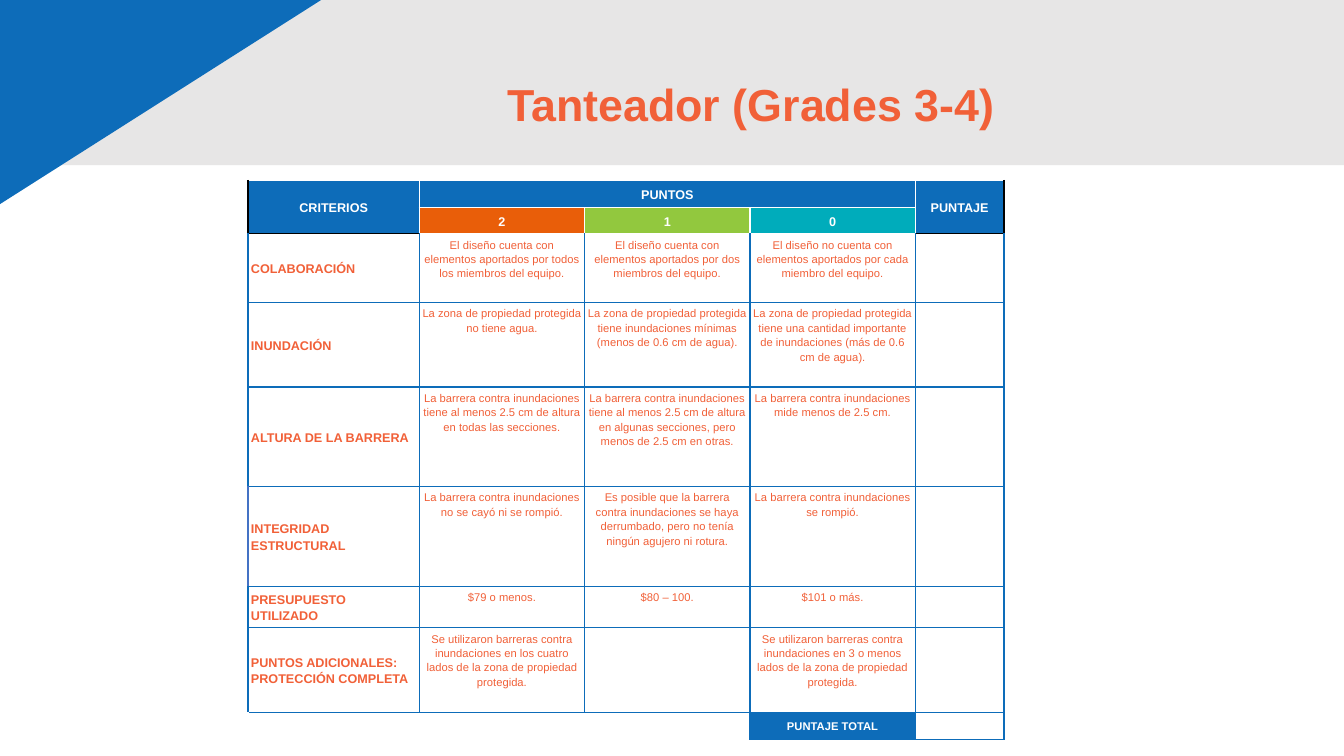
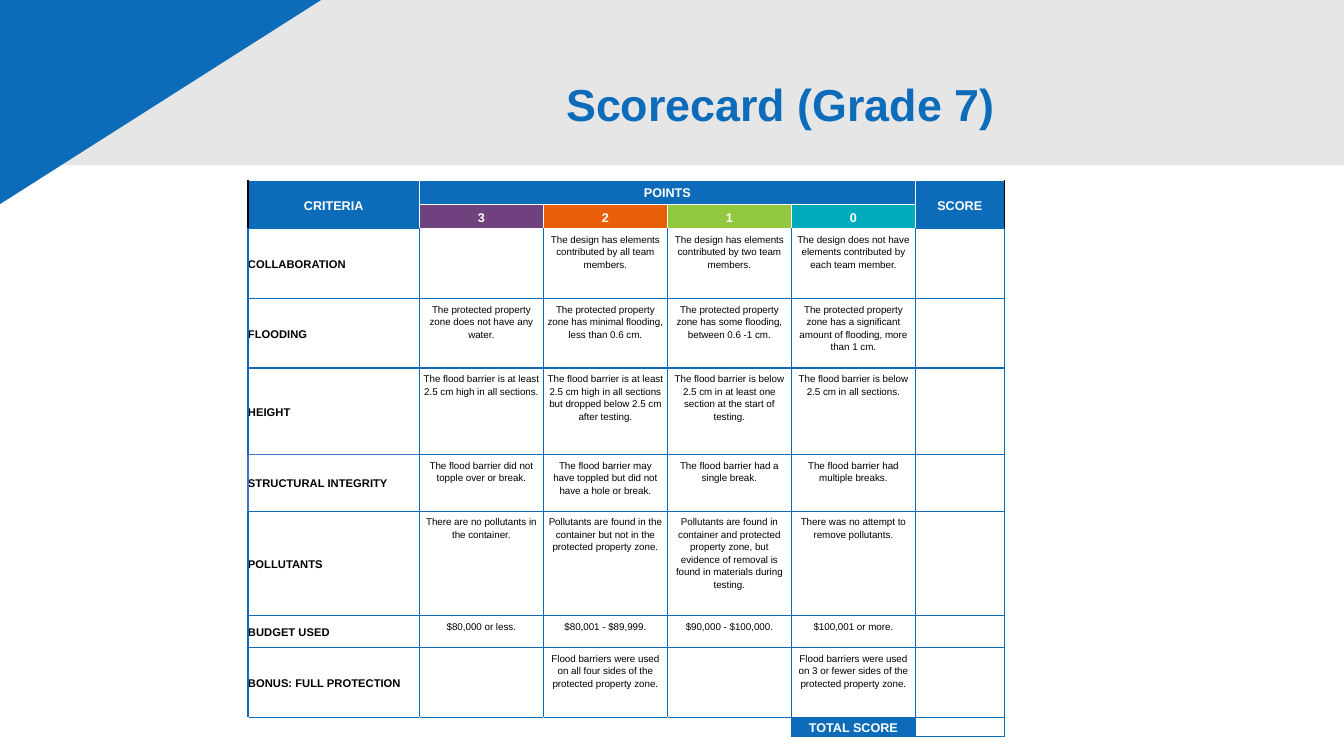
from lxml.etree import SubElement
from pptx import Presentation
from pptx.dml.color import RGBColor
from pptx.enum.shapes import MSO_SHAPE as SHAPE
from pptx.enum.text import MSO_ANCHOR as ANCHOR, PP_ALIGN as ALIGN
from pptx.oxml.ns import qn
from pptx.util import Pt

BLUE = RGBColor(0x0D, 0x6C, 0xB9)
AZURE = RGBColor(0x44, 0x72, 0xC4)
GRAY = RGBColor(0xE7, 0xE6, 0xE6)
CORAL = RGBColor(0xF1, 0x60, 0x38)
PURPLE = RGBColor(0x70, 0x41, 0x7F)
ORANGE = RGBColor(0xE9, 0x5E, 0x09)
GREEN = RGBColor(0x92, 0xC8, 0x3E)
TEAL = RGBColor(0x00, 0xAC, 0xBB)
WHITE = RGBColor(0xFF, 0xFF, 0xFF)
BLACK = RGBColor(0, 0, 0)
SCORES = {"3": PURPLE, "2": ORANGE, "1": GREEN, "0": TEAL}


def write(frame, text, size=9, color=WHITE, bold=True, align=ALIGN.CENTER, space=1.15):
    para = frame.paragraphs[0]
    para.alignment = align
    para.line_spacing = space
    if not text:
        SubElement(para._p, qn("a:endParaRPr"), sz=str(size * 100))
        return
    run = para.add_run()
    run.text = text
    font = run.font
    font.name = "Arial"
    font.size = Pt(size)
    font.bold = bold
    font.color.rgb = color


def edge(cell, sides):
    props = cell._tc.get_or_add_tcPr()
    for side in "LRTB":
        if side in sides:
            line = SubElement(props, qn("a:ln" + side), w=str(Pt(1)))
            fill = SubElement(line, qn("a:solidFill"))
            SubElement(fill, qn("a:srgbClr"), val=str(sides[side]))


spanish = {
    "title": "Tanteador (Grades 3-4)", "hue": CORAL, "ink": CORAL,
    "label": 9, "body": 8, "total": 8, "inset": 2.16, "pad": 2.16,
    "rule": BLACK, "tint": "L", "join": True,
    "cols": [122.4, 118.1, 118.1, 118.1, 63.4],
    "heights": [19.6, 18.6, 49.2, 60.2, 71.3, 71.2, 29.6, 60.2, 19.8],
    "rows": [
        ["CRITERIOS", "PUNTOS", "", "", "PUNTAJE"],
        ["", "2", "1", "0", ""],
        ["COLABORACIÓN",
         "El diseño cuenta con elementos aportados por todos los miembros del equipo.",
         "El diseño cuenta con elementos aportados por dos miembros del equipo.",
         "El diseño no cuenta con elementos aportados por cada miembro del equipo.", ""],
        ["INUNDACIÓN",
         "La zona de propiedad protegida no tiene agua.",
         "La zona de propiedad protegida tiene inundaciones mínimas (menos de 0.6 cm de agua).",
         "La zona de propiedad protegida tiene una cantidad importante de inundaciones "
         "(más de 0.6 cm de agua).", ""],
        ["ALTURA DE LA BARRERA",
         "La barrera contra inundaciones tiene al menos 2.5 cm de altura en todas las secciones.",
         "La barrera contra inundaciones tiene al menos 2.5 cm de altura en algunas secciones, "
         "pero menos de 2.5 cm en otras.",
         "La barrera contra inundaciones mide menos de 2.5 cm.", ""],
        ["INTEGRIDAD ESTRUCTURAL",
         "La barrera contra inundaciones no se cayó ni se rompió.",
         "Es posible que la barrera contra inundaciones se haya derrumbado, "
         "pero no tenía ningún agujero ni rotura.",
         "La barrera contra inundaciones se rompió.", ""],
        ["PRESUPUESTO UTILIZADO", "$79 o menos.", "$80 – 100.", "$101 o más.", ""],
        ["PUNTOS ADICIONALES: PROTECCIÓN COMPLETA",
         "Se utilizaron barreras contra inundaciones en los cuatro lados "
         "de la zona de propiedad protegida.", "",
         "Se utilizaron barreras contra inundaciones en 3 o menos lados "
         "de la zona de propiedad protegida.", ""],
        ["", "", "", "PUNTAJE TOTAL", ""],
    ],
}
english = {
    "title": "Scorecard (Grade 7)", "hue": BLUE, "ink": BLACK,
    "label": 8, "body": 7, "total": 9, "inset": 0, "pad": 2.88,
    "rule": BLUE, "tint": "LTRB", "join": False,
    "cols": [122.4, 88.6, 88.6, 88.6, 88.6, 63.4],
    "heights": [17.3, 17.3, 49.8, 49.6, 62, 40.4, 74.5, 22.9, 49.8, 13.7],
    "rows": [
        ["CRITERIA", "POINTS", "", "", "", "SCORE"],
        ["", "3", "2", "1", "0", ""],
        ["COLLABORATION", "",
         "The design has elements contributed by all team members.",
         "The design has elements contributed by two team members.",
         "The design does not have elements contributed by each team member.", ""],
        ["FLOODING",
         "The protected property zone does not have any water.",
         "The protected property zone has minimal flooding, less than 0.6 cm.",
         "The protected property zone has some flooding, between 0.6 -1 cm.",
         "The protected property zone has a significant amount of flooding, more than 1 cm.", ""],
        ["HEIGHT",
         "The flood barrier is at least 2.5 cm high in all sections.",
         "The flood barrier is at least 2.5 cm high in all sections "
         "but dropped below 2.5 cm after testing.",
         "The flood barrier is below 2.5 cm in at least one section at the start of testing.",
         "The flood barrier is below 2.5 cm in all sections.", ""],
        ["STRUCTURAL INTEGRITY",
         "The flood barrier did not topple over or break.",
         "The flood barrier may have toppled but did not have a hole or break.",
         "The flood barrier had a single break.",
         "The flood barrier had multiple breaks.", ""],
        ["POLLUTANTS",
         "There are no pollutants in the container.",
         "Pollutants are found in the container but not in the protected property zone.",
         "Pollutants are found in container and protected property zone, "
         "but evidence of removal is found in materials during testing.",
         "There was no attempt to remove pollutants.", ""],
        ["BUDGET USED", "$80,000 or less.", "$80,001 - $89,999.",
         "$90,000 - $100,000.", "$100,001 or more.", ""],
        ["BONUS: FULL PROTECTION", "",
         "Flood barriers were used on all four sides of the protected property zone.", "",
         "Flood barriers were used on 3 or fewer sides of the protected property zone.", ""],
        ["", "", "", "", "TOTAL SCORE", ""],
    ],
}

prs = Presentation()
prs.slide_width, prs.slide_height = Pt(960), Pt(540)

for card in (spanish, english):
    slide = prs.slides.add_slide(prs.slide_layouts[6])
    shapes = slide.shapes

    band = shapes.add_shape(SHAPE.RECTANGLE, 0, 0, Pt(960), Pt(118))
    corner = shapes.add_shape(SHAPE.RIGHT_TRIANGLE, Pt(41.8), Pt(-41.8), Pt(145.8), Pt(229.4))
    corner.rotation = 90
    for shape, color in ((band, GRAY), (corner, BLUE)):
        shape.shadow.inherit = False
        shape.fill.solid()
        shape.fill.fore_color.rgb = color
        shape.line.fill.background()

    title = shapes.add_textbox(Pt(19.4), Pt(24.5), Pt(698.4), Pt(104.4)).text_frame
    title.word_wrap = True
    title.vertical_anchor = ANCHOR.MIDDLE
    write(title, card["title"], size=32, color=card["hue"], align=ALIGN.RIGHT, space=0.9)

    rows, cols, heights = card["rows"], card["cols"], card["heights"]
    end, last = len(rows) - 1, len(cols) - 1
    table = shapes.add_table(len(rows), len(cols), Pt(177.1), Pt(128.9),
                             Pt(sum(cols)), Pt(sum(heights))).table
    table.first_row = table.horz_banding = False
    for col, width in zip(table.columns, cols):
        col.width = Pt(width)
    for row, height in zip(table.rows, heights):
        row.height = Pt(height)
    table.cell(0, 1).merge(table.cell(0, last - 1))
    for c in (0, last):
        table.cell(0, c).merge(table.cell(1, c))
    if card["join"]:
        table.cell(end, 0).merge(table.cell(end, last - 2))

    for r, texts in enumerate(rows):
        for c, text in enumerate(texts):
            cell = table.cell(r, c)
            if cell.is_spanned:
                continue
            side = c in (0, last)
            sides = dict.fromkeys("LRTB", BLUE)
            fill, pad, anchor = WHITE, card["inset"], ANCHOR.MIDDLE
            look = {}
            if r < 2:
                fill = SCORES.get(text, BLUE)
                sides = dict.fromkeys("LRTB", WHITE)
                if side:
                    sides["B"] = card["rule"]
                    sides["R" if c else "L"] = BLACK
            elif r == end:
                look = {"size": card["total"]}
                if text:
                    fill = BLUE
                elif c < last - 1:
                    sides = {"T": BLUE}
            elif c == 0:
                look = {"size": card["label"], "color": card["ink"], "align": ALIGN.LEFT}
            else:
                look = {"size": card["body"], "color": card["ink"], "bold": False}
                pad, anchor = card["pad"], ANCHOR.TOP
            if r == 2:
                sides["T"] = card["rule"] if side else WHITE
            if r == 5 and c == 0:
                sides.update(dict.fromkeys(card["tint"], AZURE))
            edge(cell, sides)
            cell.fill.solid()
            cell.fill.fore_color.rgb = fill
            cell.vertical_anchor = anchor
            cell.margin_left = cell.margin_right = Pt(pad)
            cell.margin_top = cell.margin_bottom = Pt(pad)
            write(cell.text_frame, text, **look)

prs.save("out.pptx")
